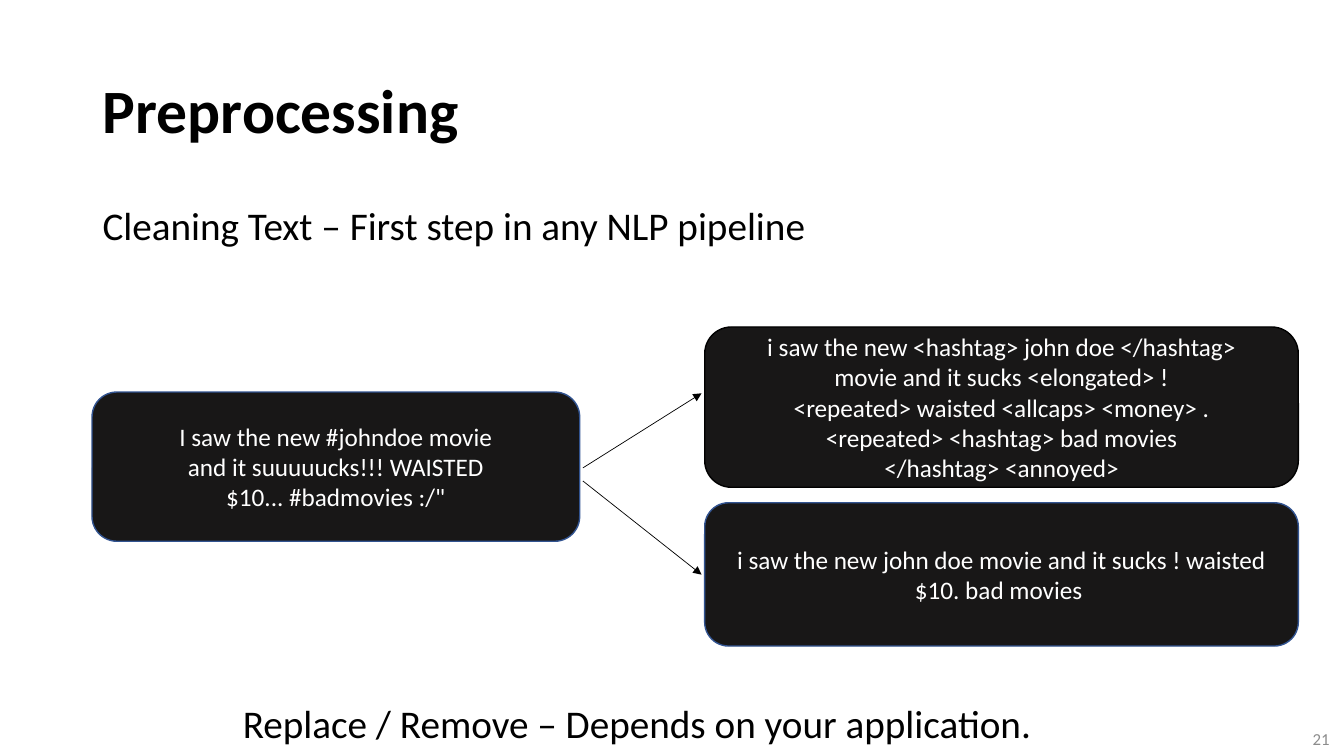
from dataclasses import dataclass

import pptx
import pptx.dml.color
import pptx.enum.shapes
import pptx.enum.text
import pptx.oxml
import pptx.oxml.ns
import pptx.util
from pptx.util import Cm

TITLE = ("Preprocessing", (2.34, 1.02, 29.21, 3.68))
LEAD = ("Cleaning Text – First step in any NLP pipeline", (2.33, 5.08, 29.21, 2.49))
CLOSING = ("Replace / Remove – Depends on your application.", (5.87, 17.73, 22.94, 1.3))
NUMBER = ("21", (26.14, 18.11, 7.62, 1.02))

GLUE, HARD_SPACE = "~", chr(160)
RAW = (
    "I saw the new #johndoe~movie and~it~suuuuucks!!!~WAISTED $10...~#badmovies :/\"",
    (2.32, 9.88, 12.29, 3.76),
    "edge",
)
CLEANED = [
    (
        "i~saw the new <hashtag> john doe~</hashtag> movie~and it sucks~<elongated> ! "
        "<repeated>~waisted~<allcaps> <money> . <repeated>~<hashtag>~bad movies "
        "</hashtag>~<annoyed>",
        (17.76, 8.24, 14.96, 4.04),
        "text",
    ),
    (
        "i~saw the new john doe~movie~and it sucks~! waisted $10. bad movies ",
        (17.76, 12.67, 14.96, 3.61),
        "edge",
    ),
]
ARROW_HEIGHTS = [(11.79, 9.91), (12.12, 14.48)]
ARROW_GAP = 0.08


@dataclass(frozen=True)
class Theme:
    font: str = "Calibri"
    text: str = "000000"
    box: str = "181717"
    box_text: str = "FFFFFF"
    edge: str = "325491"
    muted: str = "8C8C8C"
    title_size: int = 44
    lead_size: int = 28
    box_size: int = 18
    number_size: int = 12


THEME = Theme()
ALIGN = pptx.enum.text.PP_ALIGN
ANCHOR = pptx.enum.text.MSO_ANCHOR


def rgb(value):
    return pptx.dml.color.RGBColor.from_string(value)


def place(shape, box):
    shape.left, shape.top, shape.width, shape.height = map(Cm, box)


def write(shape, text, size, color, align=ALIGN.LEFT, anchor=ANCHOR.TOP,
          bold=False, spacing=1.0, before=0):
    tf = shape.text_frame
    tf.word_wrap = True
    tf.auto_size = pptx.enum.text.MSO_AUTO_SIZE.NONE
    tf.vertical_anchor = anchor
    p = tf.paragraphs[0]
    p.alignment = align
    p.line_spacing = spacing
    p.space_before = pptx.util.Pt(before)
    r = p.add_run()
    r.text = text.replace(GLUE, HARD_SPACE)
    r.font.name = THEME.font
    r.font.size = pptx.util.Pt(size)
    r.font.bold = bold
    r.font.color.rgb = rgb(color)
    return p


def add_box(s, text, box, edge):
    sp = s.shapes.add_shape(
        pptx.enum.shapes.MSO_SHAPE.ROUNDED_RECTANGLE, *map(Cm, box))
    sp.shadow.inherit = False
    sp.fill.solid()
    sp.fill.fore_color.rgb = rgb(THEME.box)
    sp.line.color.rgb = rgb(getattr(THEME, edge))
    sp.line.width = pptx.util.Pt(1)
    write(sp, text, THEME.box_size, THEME.box_text, ALIGN.CENTER, ANCHOR.MIDDLE)


def add_arrow(s, x1, y1, x2, y2):
    line = s.shapes.add_connector(
        pptx.enum.shapes.MSO_CONNECTOR.STRAIGHT, *map(Cm, (x1, y1, x2, y2)))
    line.line.color.rgb = rgb(THEME.text)
    line.line.width = pptx.util.Pt(0.5)
    ns = pptx.oxml.ns.nsdecls("a")
    line.line._get_or_add_ln().append(
        pptx.oxml.parse_xml(f'<a:tailEnd {ns} type="triangle"/>'))
    line._element.spPr.append(pptx.oxml.parse_xml(f"<a:effectLst {ns}/>"))


def main():
    prs = pptx.Presentation()
    prs.slide_width, prs.slide_height = Cm(33.87), Cm(19.05)
    s = prs.slides.add_slide(prs.slide_layouts[1])

    title, lead = s.shapes.title, s.placeholders[1]
    place(title, TITLE[1])
    write(title, TITLE[0], THEME.title_size, THEME.text,
          anchor=ANCHOR.MIDDLE, bold=True, spacing=0.9)
    place(lead, LEAD[1])
    p = write(lead, LEAD[0], THEME.lead_size, THEME.text, spacing=0.9, before=10)
    pPr = p._p.get_or_add_pPr()
    pPr.set("marL", "0")
    pPr.set("indent", "0")
    pPr.append(pptx.oxml.parse_xml(f'<a:buNone {pptx.oxml.ns.nsdecls("a")}/>'))

    number = s.shapes.add_textbox(*map(Cm, NUMBER[1]))
    write(number, NUMBER[0], THEME.number_size, THEME.muted,
          ALIGN.RIGHT, ANCHOR.MIDDLE)

    for text, box, edge in [RAW, *CLEANED]:
        add_box(s, text, box, edge)

    left, _, width, _ = RAW[1]
    for (_, target, _), (start, end) in zip(CLEANED, ARROW_HEIGHTS):
        add_arrow(s, left + width + ARROW_GAP, start, target[0] - ARROW_GAP, end)

    closing = s.shapes.add_textbox(*map(Cm, CLOSING[1]))
    write(closing, CLOSING[0], THEME.lead_size, THEME.text, spacing=0.8, before=10)

    prs.save("out.pptx")


if __name__ == "__main__":
    main()
